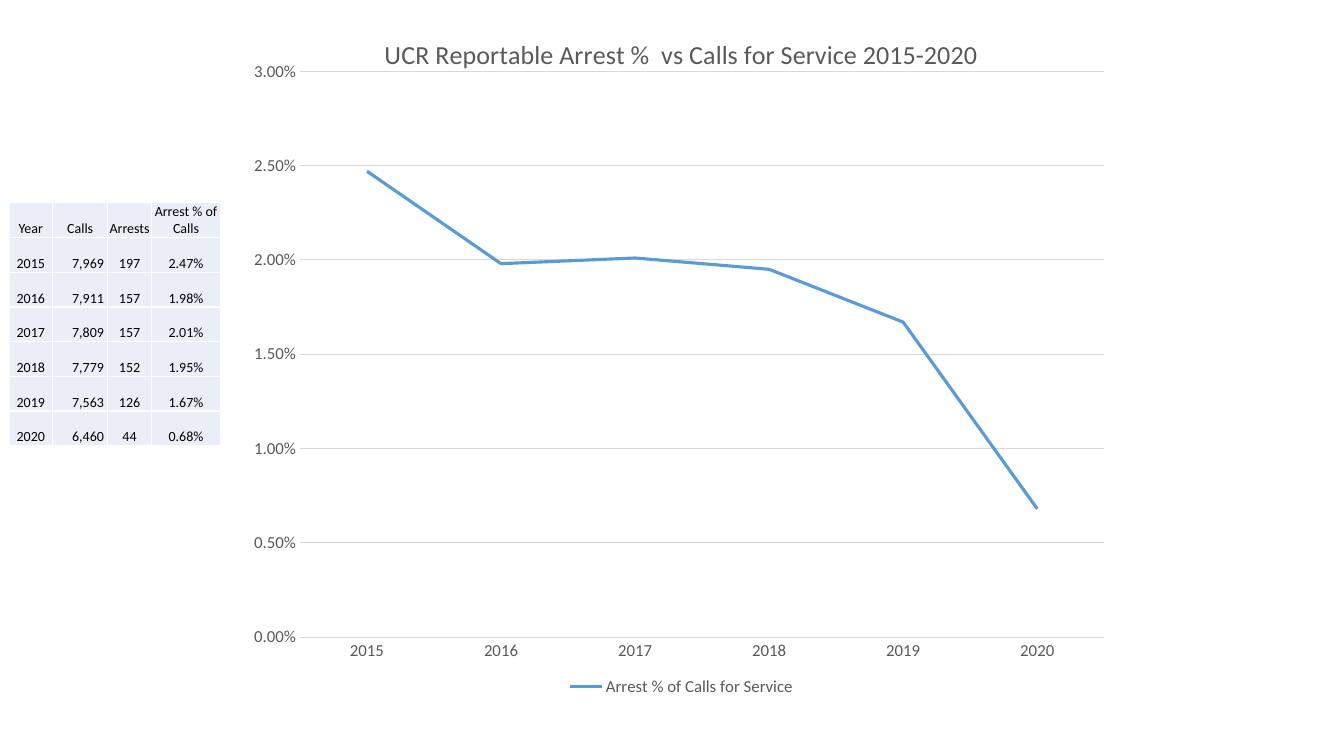
import pptx
import pptx.chart.data
import pptx.dml.color
import pptx.enum.chart
import pptx.enum.text
import pptx.oxml
import pptx.oxml.ns
import pptx.util
from pptx.util import Inches, Pt

TITLE = "UCR Reportable Arrest %  vs Calls for Service 2015-2020"
SERIES = "Arrest % of Calls for Service"
HEADER = ("Year", "Calls", "Arrests", "Arrest % of Calls")
RECORDS = [
    ("2015", 7969, 197, 0.0247),
    ("2016", 7911, 157, 0.0198),
    ("2017", 7809, 157, 0.0201),
    ("2018", 7779, 152, 0.0195),
    ("2019", 7563, 126, 0.0167),
    ("2020", 6460, 44, 0.0068),
]
COL_WIDTHS = (0.43, 0.55, 0.43, 0.69)
TABLE_HEIGHT = 2.41
PLOT = {"x": 0.065, "y": 0.086, "w": 0.917, "h": 0.822}
FONT, GREY, GRID, BLUE, CELL = "Calibri", "595959", "D9D9D9", "5B9BD5", "EAEFF7"


def rgb(value):
    return pptx.dml.color.RGBColor.from_string(value)


def set_font(font, size, color):
    font.name, font.size, font.bold = FONT, Pt(size), False
    font.color.rgb = rgb(color)


def set_line(line, color, width):
    line.color.rgb, line.width = rgb(color), Pt(width)


def add_borders(cell):
    """Draw a white 1 pt border on all four sides."""
    tcPr = cell._tc.get_or_add_tcPr()
    for i, side in enumerate(("lnL", "lnR", "lnT", "lnB")):
        tcPr.insert(i, pptx.oxml.parse_xml(
            f'<a:{side} {pptx.oxml.ns.nsdecls("a")} w="12700"><a:solidFill>'
            f'<a:srgbClr val="FFFFFF"/></a:solidFill></a:{side}>'))


def add_arrest_chart(s):
    data = pptx.chart.data.CategoryChartData(number_format="0.00%")
    data.categories = [row[0] for row in RECORDS]
    data.add_series(SERIES, [row[3] for row in RECORDS])
    chart = s.shapes.add_chart(
        pptx.enum.chart.XL_CHART_TYPE.LINE, Inches(2.41), Inches(0.12),
        Inches(8.7), Inches(6.83), data).chart
    set_font(chart.font, 10, "000000")

    chart.has_title = True
    tf = chart.chart_title.text_frame
    tf.text = TITLE
    set_font(tf.paragraphs[0].runs[0].font, 18.6, GREY)

    chart.has_legend = True
    chart.legend.position = pptx.enum.chart.XL_LEGEND_POSITION.BOTTOM
    chart.legend.include_in_layout = False
    set_font(chart.legend.font, 12, GREY)

    for axis in (chart.category_axis, chart.value_axis):
        axis.major_tick_mark = axis.minor_tick_mark = pptx.enum.chart.XL_TICK_MARK.NONE
        set_font(axis.tick_labels.font, 12, GREY)
    set_line(chart.category_axis.format.line, GRID, 0.75)
    values = chart.value_axis
    values.minimum_scale, values.maximum_scale, values.major_unit = 0, 0.03, 0.005
    values.format.line.fill.background()
    set_line(values.major_gridlines.format.line, GRID, 0.75)
    values.tick_labels.number_format = "0.00%"
    values.tick_labels.number_format_is_linked = False

    plot = chart.plots[0]
    plot.vary_by_categories = False
    series = plot.series[0]
    series.smooth = False
    series.marker.style = pptx.enum.chart.XL_MARKER_STYLE.NONE
    set_line(series.format.line, BLUE, 2.25)

    plot_area = chart._chartSpace.chart.plotArea
    for old in plot_area.findall(pptx.oxml.ns.qn("c:layout")):
        plot_area.remove(old)
    places = "".join(f'<c:{k} val="{v}"/>' for k, v in PLOT.items())
    plot_area.insert(0, pptx.oxml.parse_xml(
        f'<c:layout {pptx.oxml.ns.nsdecls("c")}><c:manualLayout>'
        '<c:layoutTarget val="inner"/><c:xMode val="edge"/><c:yMode val="edge"/>'
        f'{places}</c:manualLayout></c:layout>'))


def add_arrest_table(s):
    rows = [HEADER] + [(year, f"{calls:,}", str(arrests), f"{share:.2%}")
                       for year, calls, arrests, share in RECORDS]
    table = s.shapes.add_table(
        len(rows), len(HEADER), Inches(0.09), Inches(2.01),
        Inches(sum(COL_WIDTHS)), Inches(TABLE_HEIGHT)).table
    table.first_row = table.horz_banding = False
    for column, width in zip(table.columns, COL_WIDTHS):
        column.width = Inches(width)
    align = pptx.enum.text.PP_ALIGN
    for r, row in enumerate(rows):
        table.rows[r].height = Inches(TABLE_HEIGHT / len(rows))
        for c, text in enumerate(row):
            is_count = r > 0 and c == 1
            cell = table.cell(r, c)
            cell.fill.solid()
            cell.fill.fore_color.rgb = rgb(CELL)
            cell.vertical_anchor = pptx.enum.text.MSO_ANCHOR.BOTTOM
            cell.margin_left = cell.margin_top = Inches(0.01)
            cell.margin_right = Inches(0.04 if is_count else 0.01)
            cell.margin_bottom = 0
            add_borders(cell)
            p = cell.text_frame.paragraphs[0]
            p.text = text
            p.alignment = align.RIGHT if is_count else align.CENTER
            set_font(p.runs[0].font, 10, "000000")


def main():
    prs = pptx.Presentation()
    prs.slide_width, prs.slide_height = Inches(13.33), Inches(7.5)
    s = prs.slides.add_slide(prs.slide_layouts[6])
    add_arrest_chart(s)
    add_arrest_table(s)
    prs.save("out.pptx")


if __name__ == "__main__":
    main()
